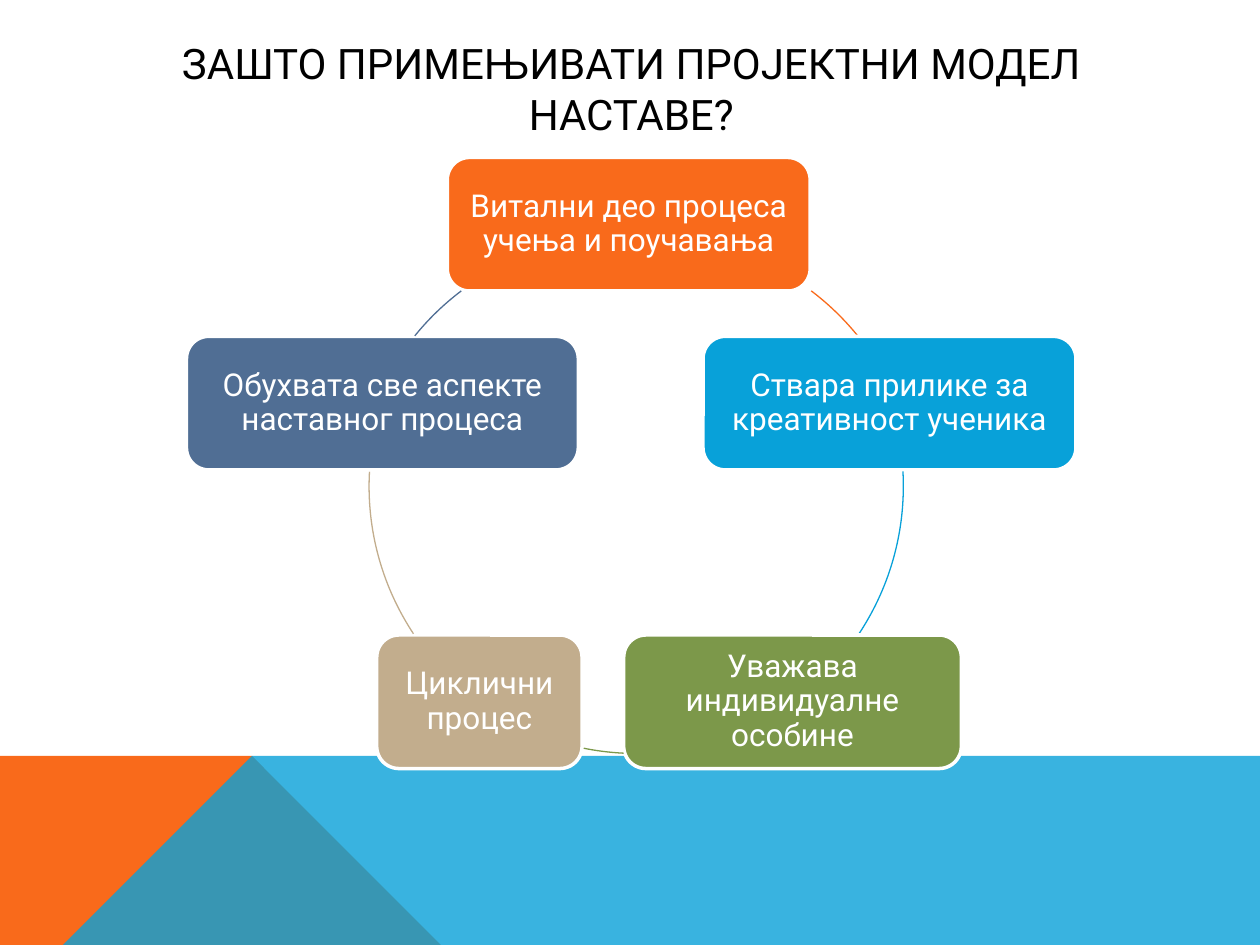
"""Builds a slide with a five-part cycle on why to use project-based teaching."""
import lxml.etree
import pptx
import pptx.dml.color
import pptx.enum.shapes
import pptx.enum.text
import pptx.oxml.ns
import pptx.util

Inches = pptx.util.Inches
Pt = pptx.util.Pt
COLORS = {
    "orange": "F96A1B",
    "blue": "08A1D9",
    "green": "7C984A",
    "sand": "C2AD8D",
    "slate": "506E94",
    "white": "FFFFFF",
    "black": "000000",
}


def rgb(name):
    return pptx.dml.color.RGBColor.from_string(COLORS[name])


def write_text(shape, text, size=18, color="white", margin=0.07, spacing=0.9):
    frame = shape.text_frame
    frame.word_wrap = True
    frame.auto_size = pptx.enum.text.MSO_AUTO_SIZE.NONE
    frame.vertical_anchor = pptx.enum.text.MSO_ANCHOR.MIDDLE
    frame.margin_left = frame.margin_right = Inches(margin)
    frame.margin_top = frame.margin_bottom = Inches(margin)
    paragraph = frame.paragraphs[0]
    paragraph.alignment = pptx.enum.text.PP_ALIGN.CENTER
    paragraph.line_spacing = spacing
    run = paragraph.add_run()
    run.text = text
    run.font.name = "Roboto"
    run.font.size = Pt(size)
    run.font.color.rgb = rgb(color)


deck = pptx.Presentation()
deck.slide_width, deck.slide_height = Inches(10), Inches(7.5)
slide = deck.slides.add_slide(deck.slide_layouts[5])

bands = [
    ("orange", None, [(0, 7.5), (0, 5.52), (2.23, 5.52), (3.91, 7.5)]),
    ("blue", 80, [(0, 7.5), (2.23, 5.52), (10, 5.53), (10, 7.5)]),
]
for color, opacity, corners in bands:
    outline = slide.shapes.build_freeform(*corners[0], scale=Inches(1))
    outline.add_line_segments(corners[1:], close=True)
    band = outline.convert_to_shape()
    band.shadow.inherit = False
    band.fill.solid()
    band.fill.fore_color.rgb = rgb(color)
    band.line.fill.background()
    if opacity:
        band_color = band._element.spPr.find(".//" + pptx.oxml.ns.qn("a:srgbClr"))
        alpha = lxml.etree.SubElement(band_color, pptx.oxml.ns.qn("a:alpha"))
        alpha.set("val", str(opacity * 1000))

title = slide.shapes.title
title.left, title.top = Inches(0.9), Inches(0.4)
title.width, title.height = Inches(8.22), Inches(0.6)
write_text(title, "ЗАШТО ПРИМЕЊИВАТИ ПРОЈЕКТНИ МОДЕЛ НАСТАВЕ?",
           size=24, color="black", margin=0.05, spacing=1.0)

reason_height = 1.06
ring_size = 4.24
reasons = [
    ("Витални део процеса учења и поучавања", "orange", (3.55, 1.25, 2.88),
     (3.04, 1.88), (307.1, 321)),
    ("Ствара прилике за креативност ученика", "blue", (5.58, 2.67, 2.96),
     (2.93, 1.74), (356.8, 33.6)),
    ("Уважава индивидуалне особине", "green", (4.95, 5.04, 2.68),
     (2.93, 1.74), (92.7, 101.7)),
    ("Циклични процес", "sand", (2.99, 5.04, 1.63),
     (2.93, 1.74), (146.5, 183.2)),
    ("Обухвата све аспекте наставног процеса", "slate", (1.48, 2.67, 3.11),
     (2.82, 1.88), (219, 232.9)),
]
for text, color, (left, top, width), (ring_left, ring_top), angles in reasons:
    reason = slide.shapes.add_shape(
        pptx.enum.shapes.MSO_SHAPE.ROUNDED_RECTANGLE,
        Inches(left), Inches(top), Inches(width), Inches(reason_height))
    reason.shadow.inherit = False
    reason.fill.solid()
    reason.fill.fore_color.rgb = rgb(color)
    reason.line.color.rgb = rgb("white")
    reason.line.width = Pt(2)
    write_text(reason, text)

    arc = slide.shapes.add_shape(
        pptx.enum.shapes.MSO_SHAPE.ARC,
        Inches(ring_left), Inches(ring_top), Inches(ring_size), Inches(ring_size))
    arc.shadow.inherit = False
    arc.fill.background()
    arc.line.color.rgb = rgb(color)
    arc.line.width = Pt(0.75)
    for position, degrees in enumerate(angles):
        arc.adjustments[position] = degrees * 0.6

deck.save("out.pptx")
